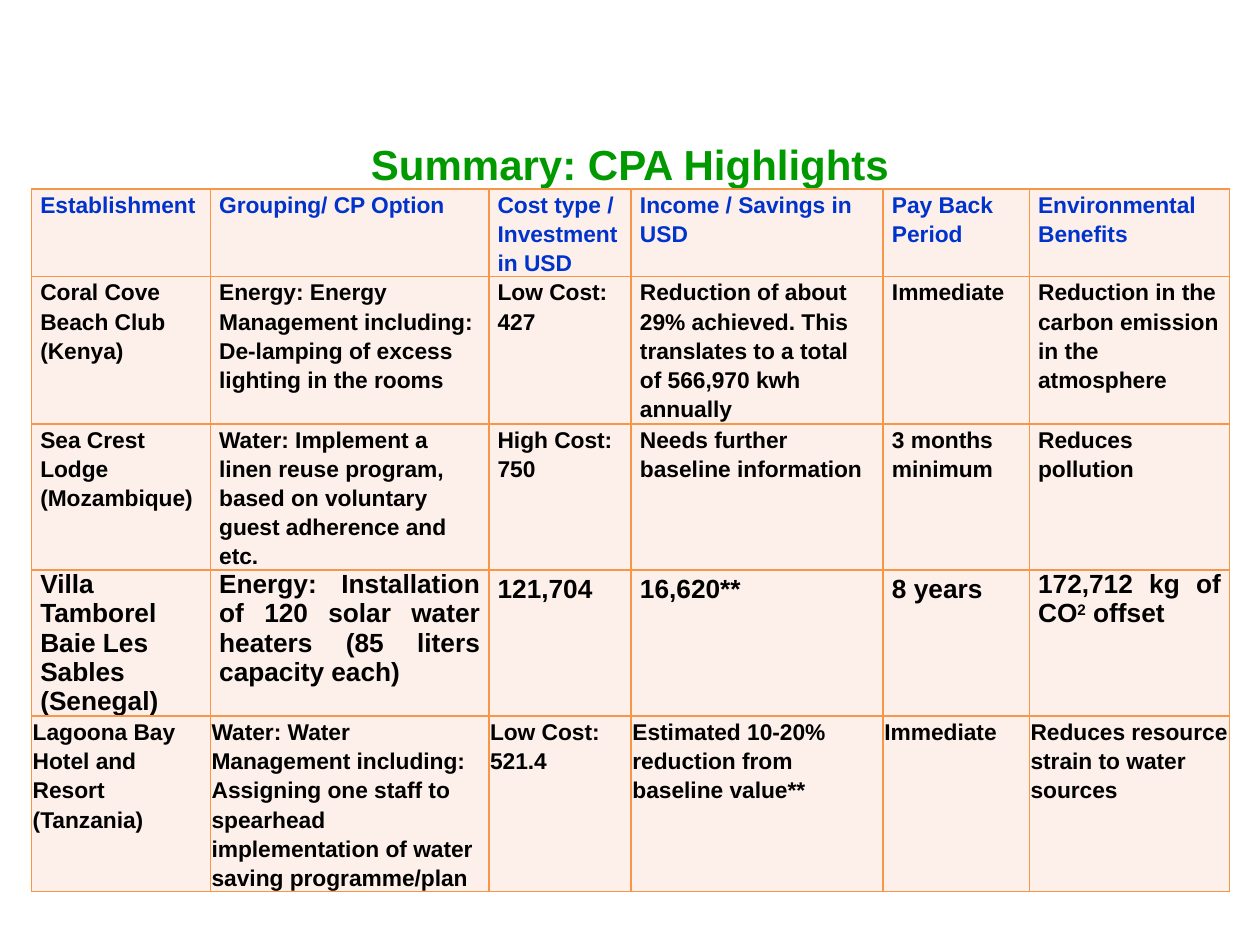
from lxml.etree import SubElement
from pptx import Presentation
from pptx.dml.color import RGBColor
from pptx.enum.text import MSO_ANCHOR, PP_ALIGN
from pptx.oxml.ns import qn
from pptx.util import Inches, Pt

GREEN = RGBColor(0x00, 0x99, 0x00)
BLUE = RGBColor(0x00, 0x33, 0xCC)
BLACK = RGBColor(0x00, 0x00, 0x00)
PEACH = RGBColor(0xFD, 0xEF, 0xE9)
ORANGE = RGBColor(0xF7, 0x96, 0x46)

TITLE = "Summary: CPA Highlights"
HEADER = ["Establishment", "Grouping/ CP Option", "Cost type / Investment in USD",
          "Income / Savings in USD", "Pay Back Period", "Environmental Benefits"]
CORAL_COVE = ["Coral Cove Beach Club (Kenya)",
              "Energy: Energy Management including: De-lamping of excess lighting in the rooms",
              "Low Cost: 427",
              "Reduction of about 29% achieved. This translates to a total of 566,970 kwh annually",
              "Immediate", "Reduction in the carbon emission in the atmosphere"]
SEA_CREST = ["Sea Crest Lodge (Mozambique)",
             "Water: Implement a linen reuse program, based on voluntary guest adherence and etc.",
             "High Cost: 750", "Needs further baseline information",
             "3 months minimum", "Reduces pollution"]
VILLA_TAMBOREL = ["Villa Tamborel Baie Les Sables (Senegal)",
                  "Energy: Installation of 120 solar water heaters (85 liters capacity each)",
                  "121,704", "16,620**", "8 years", "172,712 kg of CO^2^ offset"]
LAGOONA_BAY = ["Lagoona Bay Hotel and Resort\n(Tanzania)",
               "Water: Water Management including: Assigning one staff to spearhead "
               "implementation of water saving programme/plan",
               "Low Cost: 521.4", "Estimated 10-20% reduction from baseline value**",
               "Immediate", "Reduces resource strain to water sources"]

COLUMN_WIDTHS = [1.42, 2.21, 1.13, 2, 1.16, 1.59]
LOOSE = {"line_spacing": 1.15}
SPACED = {"line_spacing": 1.15, "space_after": Pt(10)}
SINGLE = {"line_spacing": 1.0}
JUSTIFIED = {"line_spacing": 1.0, "alignment": PP_ALIGN.JUSTIFY}
ROWS = [
    (HEADER, 0.69, 13, BLUE, 0.07, [LOOSE] * 6),
    (CORAL_COVE, 1.17, 13, BLACK, 0.07, [LOOSE] * 6),
    (SEA_CREST, 1.16, 13, BLACK, 0.07, [LOOSE] * 6),
    (VILLA_TAMBOREL, 1.16, 15, BLACK, 0.07,
     [SINGLE, JUSTIFIED, SPACED, SPACED, SPACED, JUSTIFIED]),
    (LAGOONA_BAY, 1.39, 13, BLACK, 0.01, [LOOSE] * 6),
]


def apply(target, values):
    for name, value in values.items():
        setattr(target, name, value)


def format_font(font, size, color):
    apply(font, {"name": "Arial", "size": Pt(size), "bold": True})
    font.color.rgb = color


def add_borders(cell):
    properties = cell._tc.get_or_add_tcPr()
    for position, side in enumerate(("a:lnL", "a:lnR", "a:lnT", "a:lnB")):
        line = SubElement(properties, qn(side), w=str(Pt(1)))
        fill = SubElement(line, qn("a:solidFill"))
        SubElement(fill, qn("a:srgbClr"), val=str(ORANGE))
        properties.insert(position, line)


def fill_cell(cell, text, size, color, margin, paragraph_format):
    apply(cell, {"margin_left": Inches(margin), "margin_right": Inches(margin),
                 "margin_top": 0, "margin_bottom": 0})
    cell.fill.solid()
    cell.fill.fore_color.rgb = PEACH
    add_borders(cell)
    for index, line in enumerate(text.split("\n")):
        frame = cell.text_frame
        paragraph = frame.add_paragraph() if index else frame.paragraphs[0]
        apply(paragraph, paragraph_format)
        for part, piece in enumerate(line.split("^")):
            run = paragraph.add_run()
            run.text = piece
            format_font(run.font, size, color)
            if part % 2:
                run._r.get_or_add_rPr().set("baseline", "30000")


def main():
    presentation = Presentation()
    apply(presentation, {"slide_width": Inches(10), "slide_height": Inches(7.5)})
    slide = presentation.slides.add_slide(presentation.slide_layouts[5])

    title = slide.shapes.title
    apply(title, {"left": Inches(0.25), "top": Inches(1),
                  "width": Inches(9.5), "height": Inches(0.75)})
    title.text_frame.text = TITLE
    apply(title.text_frame, {"vertical_anchor": MSO_ANCHOR.TOP,
                             "margin_top": Inches(0.1)})
    paragraph = title.text_frame.paragraphs[0]
    paragraph.alignment = PP_ALIGN.CENTER
    format_font(paragraph.runs[0].font, 24, GREEN)

    height = sum(row[1] for row in ROWS)
    table = slide.shapes.add_table(len(ROWS), len(COLUMN_WIDTHS), Inches(0.25), Inches(1.5),
                                   Inches(9.5), Inches(height)).table
    apply(table, {"first_row": False, "horz_banding": False})
    for column, width in zip(table.columns, COLUMN_WIDTHS):
        column.width = Inches(width)
    for row, (texts, row_height, size, color, margin, formats) in zip(table.rows, ROWS):
        row.height = Inches(row_height)
        for cell, text, paragraph_format in zip(row.cells, texts, formats):
            fill_cell(cell, text, size, color, margin, paragraph_format)

    presentation.save("out.pptx")


if __name__ == "__main__":
    main()
